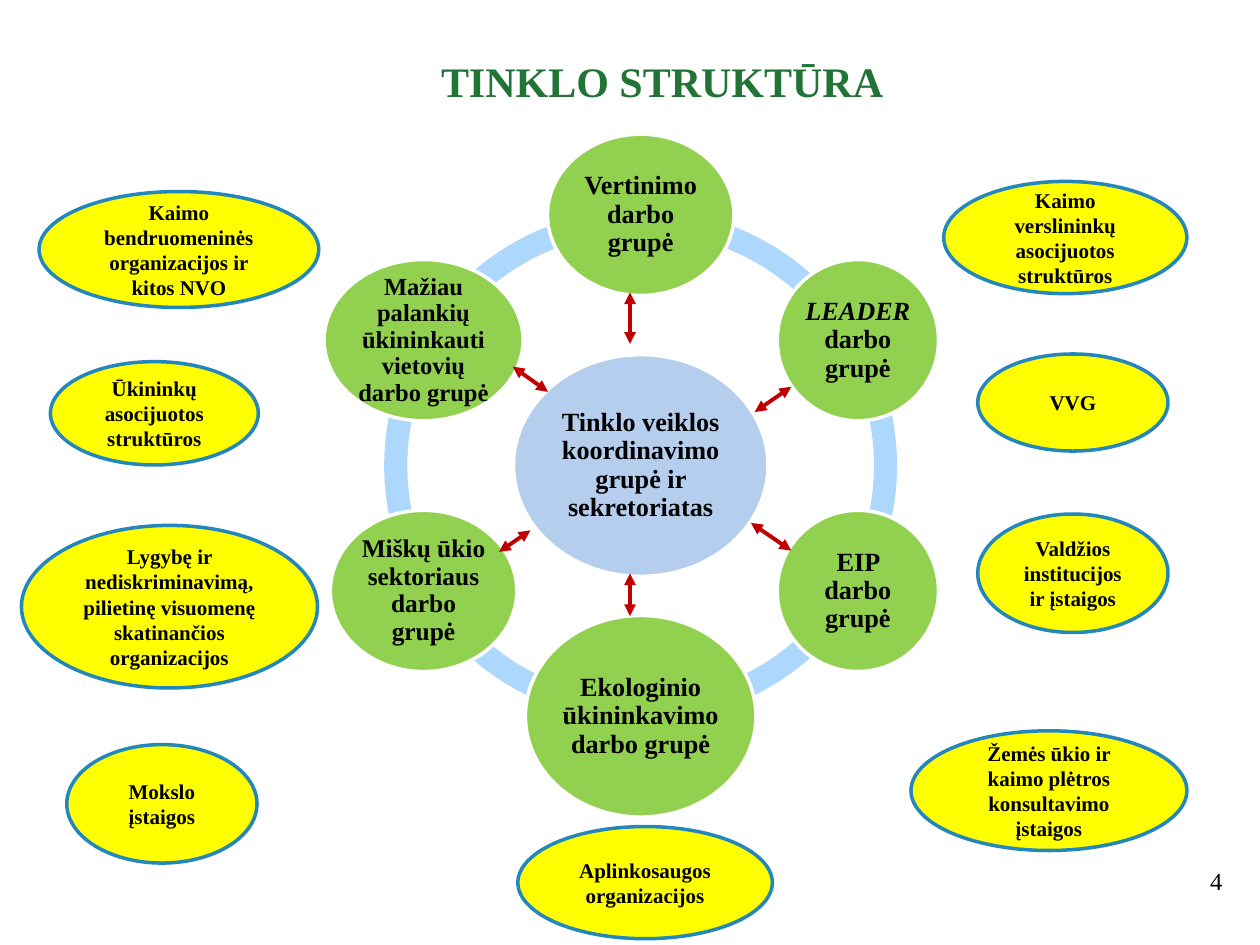
from itertools import pairwise
from math import cos, radians, sin

from lxml.etree import SubElement
from pptx import Presentation
from pptx.dml.color import RGBColor
from pptx.enum.shapes import MSO_CONNECTOR as Line, MSO_SHAPE as Kind
from pptx.enum.text import MSO_ANCHOR as Anchor, PP_ALIGN as Align
from pptx.oxml.ns import qn
from pptx.util import Inches, Pt

FONT = "Times New Roman"
HUB = [("Tinklo veiklos koordinavimo grupė ir sekretoriatas", False)]
GROUPS = [
    (1.48, 1.28, 15, [("Vertinimo darbo grupė", False)]),
    (1.28, 1.28, 15, [("LEADER", True), (" darbo grupė", False)]),
    (1.28, 1.28, 15, [("EIP darbo grupė", False)]),
    (1.83, 1.6, 15, [("Ekologinio ūkininkavimo darbo grupė", False)]),
    (1.48, 1.28, 14.5, [("Miškų ūkio sektoriaus darbo grupė", False)]),
    (1.58, 1.28, 14, [("Mažiau palankių ūkininkauti vietovių darbo grupė", False)]),
]
ARROWS = [
    (1.02, 1.25, 1.3, 1.45), (1.95, 0.66, 1.95, 1.07),
    (1.95, 2.89, 1.95, 3.23), (2.91, 2.49, 3.23, 2.71),
    (1.16, 2.55, 0.91, 2.72), (3.23, 1.41, 2.94, 1.61),
]
PARTNERS = [
    (0.17, 4.17, 2.35, 1.29, "Lygybę ir nediskriminavimą, pilietinę visuomenę skatinančios organizacijos"),
    (0.4, 2.87, 1.65, 0.82, "Ūkininkų asocijuotos struktūros"),
    (0.31, 1.52, 2.22, 0.92, "Kaimo bendruomeninės organizacijos ir kitos NVO"),
    (7.76, 2.81, 1.51, 0.77, "VVG"),
    (7.23, 5.8, 2.19, 0.95, "Žemės ūkio ir kaimo plėtros konsultavimo įstaigos"),
    (7.49, 1.44, 1.93, 0.89, "Kaimo verslininkų asocijuotos struktūros"),
    (7.76, 4.08, 1.51, 0.94, "Valdžios institucijos ir įstaigos"),
    (0.53, 5.91, 1.51, 0.94, "Mokslo įstaigos"),
    (4.11, 6.56, 2.02, 0.89, "Aplinkosaugos organizacijos"),
]


def paint(color, tone):
    """Give a colour format its hex colour."""
    color.rgb = RGBColor.from_string(tone)


def write(frame, runs, size, tone="000000", bold=True, align=Align.CENTER):
    """Write one paragraph from (text, italic) runs."""
    frame.word_wrap = True
    para = frame.paragraphs[0]
    para.alignment = align
    for text, slant in runs:
        run = para.add_run()
        run.text = text
        font = run.font
        font.name, font.size, font.bold, font.italic = FONT, Pt(size), bold, slant
        paint(font.color, tone)
    return para


def shape(slide, kind, box, fill, edge=None):
    """Add a flat filled shape, outlined only when an edge colour is given."""
    item = slide.shapes.add_shape(kind, *map(Inches, box))
    item.shadow.inherit = False
    item.fill.solid()
    paint(item.fill.fore_color, fill)
    if edge:
        paint(item.line.color, edge)
        item.line.width = Pt(2)
    else:
        item.line.fill.background()
    return item


def bubble(slide, x, y, wide, high, fill, size, runs):
    """Add a white-edged ellipse centred on a point."""
    box = (x - wide / 2, y - high / 2, wide, high)
    frame = shape(slide, Kind.OVAL, box, fill, "FFFFFF").text_frame
    frame.vertical_anchor = Anchor.MIDDLE
    frame.margin_left = frame.margin_right = Inches(0.02)
    frame.margin_top = frame.margin_bottom = Inches(0.02)
    write(frame, runs, size).line_spacing = 0.9


def wheel(slide, left, top, side):
    """Draw the ring, its hub and the six work groups."""
    for start, end in pairwise((18, 54, 90, 126, 162, 198, 18)):
        arc = shape(slide, Kind.BLOCK_ARC, (left, top, side, side), "AED7FE")
        for i, value in enumerate((start * 0.6, end * 0.6, 0.045)):
            arc.adjustments[i] = value
    x, y, reach = left + side / 2, top + side / 2, 1.99
    bubble(slide, x, y, 2.02, 1.76, "B5CEED", 15, HUB)
    for i, (wide, high, size, runs) in enumerate(GROUPS):
        turn = radians(60 * i - 90)
        bubble(slide, x + reach * cos(turn), y + reach * sin(turn),
               wide, high, "92D050", size, runs)


def arrows(slide, left, top):
    """Draw the two-way arrows between hub and groups."""
    for x1, y1, x2, y2 in ARROWS:
        ends = (left + x1, top + y1, left + x2, top + y2)
        link = slide.shapes.add_connector(Line.STRAIGHT, *map(Inches, ends))
        paint(link.line.color, "C00000")
        link.line.width = Pt(2.25)
        for tag in ("a:headEnd", "a:tailEnd"):
            SubElement(link.line._get_or_add_ln(), qn(tag), type="triangle")
        SubElement(link._element.spPr, qn("a:effectLst"))


def partners(slide):
    """Draw the partner ellipses around the wheel."""
    for *box, text in PARTNERS:
        frame = shape(slide, Kind.OVAL, box, "FFFF00", "2487BB").text_frame
        frame.vertical_anchor = Anchor.MIDDLE
        write(frame, [(text, False)], 12)


def label(slide, box, text, size, **style):
    """Add a text box with one line."""
    frame = slide.shapes.add_textbox(*map(Inches, box)).text_frame
    write(frame, [(text, False)], size, **style)


def main():
    """Build and save the slide."""
    deck = Presentation()
    deck.slide_width, deck.slide_height = Inches(10), Inches(7.5)
    slide = deck.slides.add_slide(deck.slide_layouts[6])
    label(slide, (7.47, 6.82, 2.33, 0.52), "4", 14, bold=False, align=Align.RIGHT)
    wheel(slide, 3.05, 1.66, 4.07)
    partners(slide)
    arrows(slide, 3.05, 1.66)
    label(slide, (1.16, 0.39, 8.19, 0.5), "TINKLO STRUKTŪRA", 24, tone="217436")
    deck.save("out.pptx")


if __name__ == "__main__":
    main()
